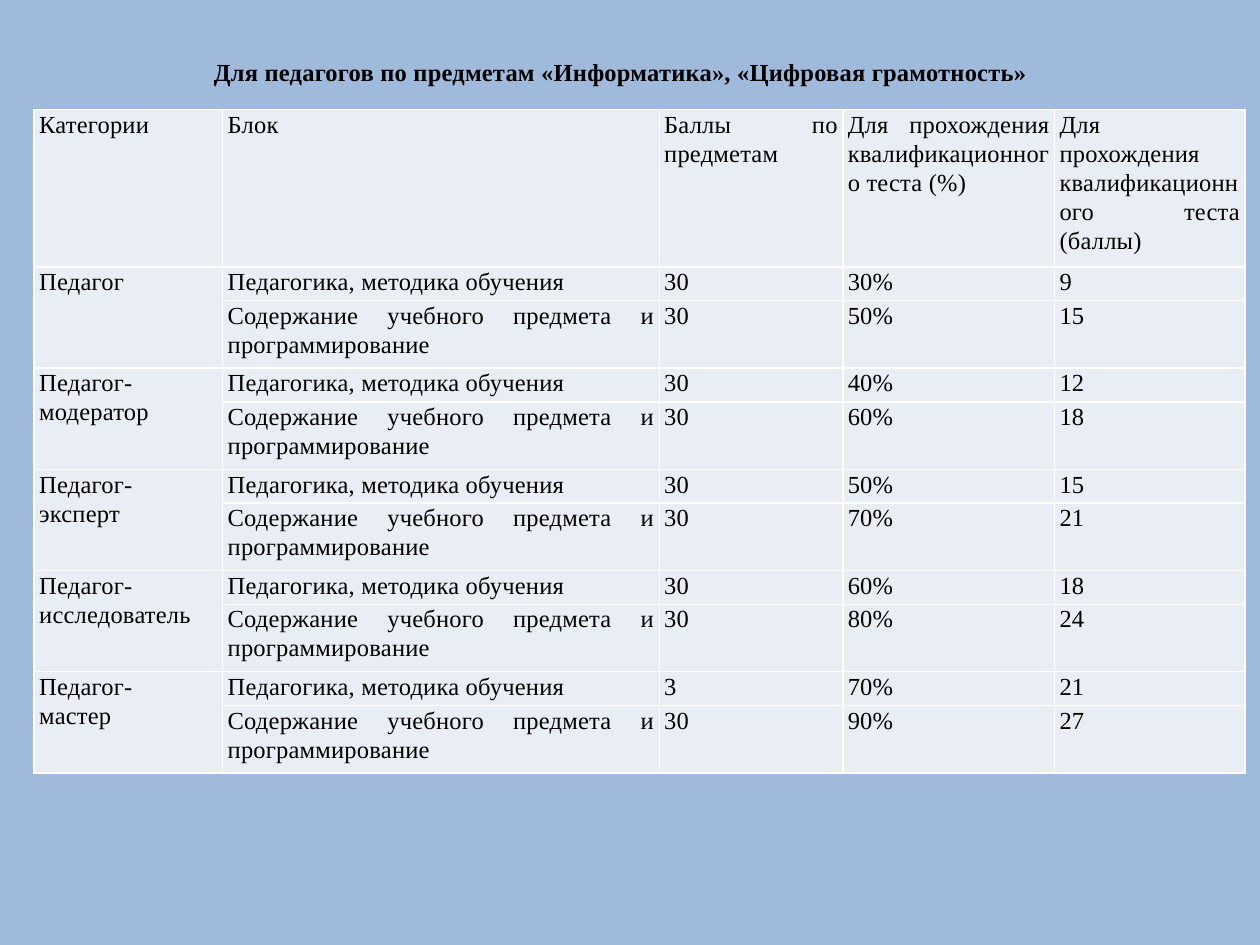
"""Build a slide with the pass marks of the qualification test for teachers."""
from lxml.etree import SubElement
from pptx import Presentation
from pptx.dml.color import RGBColor
from pptx.enum.shapes import MSO_SHAPE as Shape
from pptx.enum.text import MSO_ANCHOR as Anchor, PP_ALIGN as Align
from pptx.oxml.ns import qn
from pptx.util import Cm, Pt


def paint(fill, color):
    fill.solid()
    fill.fore_color.rgb = RGBColor.from_string(color)


def style(para, align, bold=False):
    para.alignment = align
    font = para.font
    font.name, font.size, font.bold = "Times New Roman", Pt(14), bold
    paint(font.fill, "000000")
    font._element.set("spc", "10")


deck = Presentation()
deck.slide_width, deck.slide_height = Cm(25.4), Cm(19.05)
slide = deck.slides.add_slide(deck.slide_layouts[6])

back = slide.shapes.add_shape(Shape.RECTANGLE, Cm(-0.03), Cm(-0.05), Cm(25.43), Cm(19.13))
back.shadow.inherit = False
back.line.fill.background()
paint(back.fill, "95B3D7")
tint = back.fill._xPr.find(qn("a:solidFill"))[0]
SubElement(tint, qn("a:alpha"), val="90000")

title = slide.shapes.add_textbox(Cm(0.71), Cm(1.02), Cm(23.6), Cm(1.63))
frame = title.text_frame
frame.word_wrap = True
frame.vertical_anchor = Anchor.TOP
frame.text = "Для педагогов по предметам «Информатика», «Цифровая грамотность»"
style(frame.paragraphs[0], Align.CENTER, True)

rows = [["Категории", "Блок", "Баллы по предметам",
         "Для прохождения квалификационного теста (%)",
         "Для прохождения квалификационного теста (баллы)"]]
levels = [
    ("Педагог", "30", ("30%", "9"), ("50%", "15")),
    ("Педагог-\nмодератор", "30", ("40%", "12"), ("60%", "18")),
    ("Педагог-\nэксперт", "30", ("50%", "15"), ("70%", "21")),
    ("Педагог-\nисследователь", "30", ("60%", "18"), ("80%", "24")),
    ("Педагог-\nмастер", "3", ("70%", "21"), ("90%", "27")),
]
for name, score, method, topic in levels:
    rows.append([name, "Педагогика, методика обучения", score, *method])
    rows.append(["", "Содержание учебного предмета и программирование", "30", *topic])

widths = [3.8, 8.8, 3.7, 4.27, 3.84]
heights = [3.17] + [0.68, 1.36] * len(levels)
table = slide.shapes.add_table(len(rows), len(widths), Cm(0.69), Cm(2.21),
                               Cm(sum(widths)), Cm(sum(heights))).table
table.first_row = table.horz_banding = False
for col, width in zip(table.columns, widths):
    col.width = Cm(width)

for r, (row, height) in enumerate(zip(rows, heights)):
    table.rows[r].height = Cm(height)
    for c, text in enumerate(row):
        cell = table.cell(r, c)
        cell.margin_left = cell.margin_right = Cm(0.1)
        cell.margin_top = cell.margin_bottom = 0
        paint(cell.fill, "E9EDF4")
        cell.text = text
        for para in cell.text_frame.paragraphs:
            para.line_spacing = 1.07
            style(para, Align.JUSTIFY)

for r in range(1, len(rows), 2):
    table.cell(r, 0).merge(table.cell(r + 1, 0))

deck.save("out.pptx")
